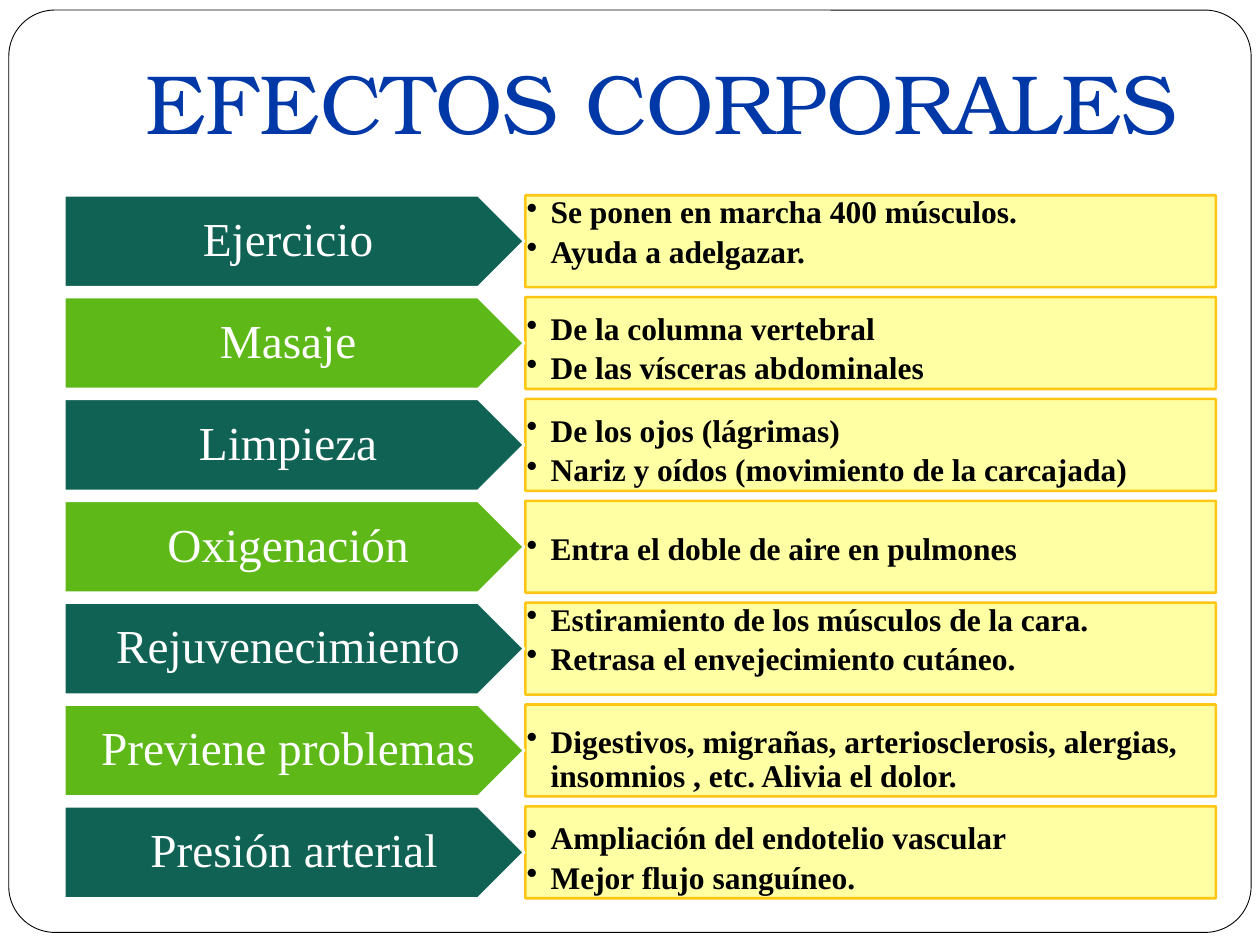
import pptx
import pptx.util
import pptx.dml.color
import pptx.enum.shapes
import pptx.enum.text
import pptx.oxml.ns
from lxml import etree

Inches = pptx.util.Inches
Pt = pptx.util.Pt
RGBColor = pptx.dml.color.RGBColor
SHAPE = pptx.enum.shapes.MSO_SHAPE
ALIGN = pptx.enum.text.PP_ALIGN
ANCHOR = pptx.enum.text.MSO_ANCHOR
qn = pptx.oxml.ns.qn

WHITE = RGBColor(0xFF, 0xFF, 0xFF)
BLACK = RGBColor(0x00, 0x00, 0x00)
BLUE = RGBColor(0x00, 0x38, 0xA8)
TEAL = RGBColor(0x10, 0x62, 0x54)
GREEN = RGBColor(0x5D, 0xB8, 0x18)
YELLOW = RGBColor(0xFF, 0xFF, 0x4B)
AMBER = RGBColor(0xFF, 0xC0, 0x00)

TITLE_FONT = "TeX Gyre Bonum"
BODY_FONT = "Times New Roman"

FIRST_TOP, LAST_TOP, ROW_HEIGHT = 1.55, 6.4, 0.73
EFFECTS = [
    ("Ejercicio ", 0.01, ["Se ponen en marcha 400 músculos.", "Ayuda a adelgazar."]),
    ("Masaje ", 0.13, ["De la columna vertebral", "De las vísceras abdominales"]),
    ("Limpieza ", 0.13, ["De los ojos (lágrimas)",
                         "Nariz y oídos (movimiento de la carcajada)"]),
    ("Oxigenación ", 0.26, ["Entra el doble de aire en pulmones"]),
    ("Rejuvenecimiento ", 0.01, ["Estiramiento de los músculos de la cara.",
                                 "Retrasa el envejecimiento cutáneo."]),
    ("Previene problemas ", 0.17, ["Digestivos, migrañas, arteriosclerosis, alergias, "
                                   "insomnios , etc. Alivia el dolor."]),
    ("Presión arterial", 0.13, ["Ampliación del endotelio vascular",
                                "Mejor flujo sanguíneo."]),
]


class SlideBuilder:
    """Draws the slide's elements in one shared style."""

    def __init__(self, slide):
        self.slide = slide

    def panel(self, kind, box, fill, line, width):
        panel = self.slide.shapes.add_shape(kind, *map(Inches, box))
        panel.shadow.inherit = False
        panel.fill.solid()
        panel.fill.fore_color.rgb = fill
        panel.line.color.rgb = line
        panel.line.width = Pt(width)
        return panel

    def frame(self, box):
        self.panel(SHAPE.ROUNDED_RECTANGLE, box, WHITE, BLACK, 0.5).adjustments[0] = 0.05

    def set_frame(self, holder, anchor, insets):
        frame = holder.text_frame
        frame.word_wrap = True
        frame.vertical_anchor = anchor
        (frame.margin_left, frame.margin_top,
         frame.margin_right, frame.margin_bottom) = map(Inches, insets)
        return frame

    def add_text(self, paragraph, text, size, font, color, bold=False):
        run = paragraph.add_run()
        run.text = text
        run.font.size = Pt(size)
        run.font.name = font
        run.font.color.rgb = color
        run.font.bold = bold

    def title(self, text, box):
        heading = self.slide.shapes.add_textbox(*map(Inches, box))
        frame = self.set_frame(heading, ANCHOR.BOTTOM, (0.1, 0.05, 0.1, 0.1))
        frame.paragraphs[0].alignment = ALIGN.CENTER
        self.add_text(frame.paragraphs[0], text, 48, TITLE_FONT, BLUE)

    def set_alpha(self, color_format, percent):
        color = color_format.find(".//" + qn("a:srgbClr"))
        etree.SubElement(color, qn("a:alpha"), val=str(percent * 1000))

    def details(self, items, box, top_inset):
        card = self.panel(SHAPE.RECTANGLE, box, YELLOW, AMBER, 1.5)
        properties = card._element.spPr
        self.set_alpha(properties.find(qn("a:solidFill")), 50)
        self.set_alpha(properties.find(qn("a:ln")), 90)
        frame = self.set_frame(card, ANCHOR.TOP, (0.01, top_inset, 0.01, 0))
        for index, item in enumerate(items):
            paragraph = frame.add_paragraph() if index else frame.paragraphs[0]
            paragraph.alignment = ALIGN.LEFT
            paragraph.line_spacing = 0.9
            paragraph.space_after = Pt(3)
            bullet = paragraph._p.get_or_add_pPr()
            bullet.set("marL", str(Inches(0.19)))
            bullet.set("indent", str(-Inches(0.19)))
            etree.SubElement(bullet, qn("a:buChar"), char="•")
            self.add_text(paragraph, item, 18, BODY_FONT, BLACK, True)

    def arrow(self, text, box, fill):
        label = self.panel(SHAPE.PENTAGON, box, fill, WHITE, 1.5)
        frame = self.set_frame(label, ANCHOR.MIDDLE, (0.18, 0.06, 0, 0.06))
        paragraph = frame.paragraphs[0]
        paragraph.alignment = ALIGN.CENTER
        paragraph.line_spacing = 0.9
        self.add_text(paragraph, text, 27, BODY_FONT, WHITE)


def main():
    presentation = pptx.Presentation()
    presentation.slide_width = Inches(10)
    presentation.slide_height = Inches(7.5)
    builder = SlideBuilder(presentation.slides.add_slide(presentation.slide_layouts[6]))
    builder.frame((0.07, 0.08, 9.86, 7.32))
    builder.title("EFECTOS CORPORALES", (1, 0.05, 8.5, 1.25))
    step = (LAST_TOP - FIRST_TOP) / (len(EFFECTS) - 1)
    for row, (effect, top_inset, items) in enumerate(EFFECTS):
        top = FIRST_TOP + row * step
        builder.details(items, (4.17, top, 5.48, ROW_HEIGHT), top_inset)
        builder.arrow(effect, (0.51, top, 3.65, ROW_HEIGHT), GREEN if row % 2 else TEAL)
    presentation.save("out.pptx")


if __name__ == "__main__":
    main()
